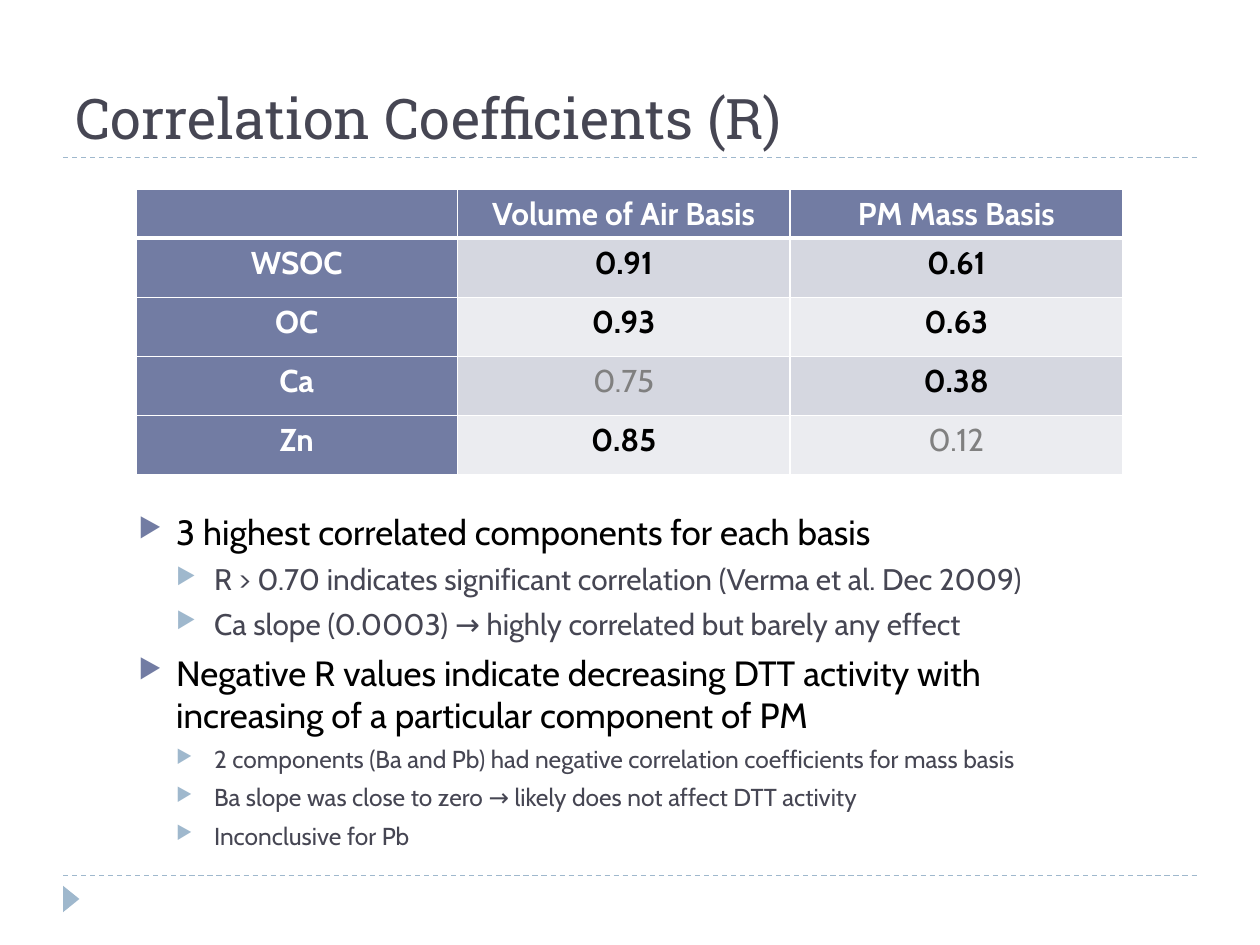
from lxml import etree
from pptx import Presentation, util as u
from pptx.dml.color import RGBColor
from pptx.enum import dml, shapes, text
from pptx.oxml import parse_xml
from pptx.oxml.ns import nsdecls, qn

rgb = RGBColor.from_string
INK, SLATE, SKY = "464653", "727CA3", "9FB8CD"


def put(p, words, size=18, color=INK, font="Cabin", bold=False):
    """Add a formatted run to a paragraph."""
    r = p.add_run()
    r.text = words
    r.font.size, r.font.name, r.font.bold = u.Pt(size), font, bold
    r.font.color.rgb = rgb(color)


prs = Presentation()
prs.slide_width, prs.slide_height = u.Inches(10), u.Inches(7.5)
W, H = prs.slide_width, prs.slide_height
margin = int(W * 0.05)
s = prs.slides.add_slide(prs.slide_layouts[5])

# Dashed rules above the footer and under the title
for y in (6.95, 1.25):
    rule = s.shapes.add_connector(shapes.MSO_CONNECTOR.STRAIGHT,
                                  margin, u.Inches(y), W - margin, u.Inches(y))
    rule.line.color.rgb = rgb(SKY)
    rule.line.width = u.Pt(0.75)
    rule.line.dash_style = dml.MSO_LINE.DASH
    etree.SubElement(rule._element.spPr, qn("a:effectLst"))

# Footer marker
sp = s.shapes.add_shape(shapes.MSO_SHAPE.ISOSCELES_TRIANGLE, u.Inches(0.46),
                        u.Inches(7.07), u.Inches(0.21), u.Inches(0.13))
sp.rotation = 90
sp.shadow.inherit = False
sp.fill.solid()
sp.fill.fore_color.rgb = rgb(SKY)
sp.line.fill.background()

# Title
title = s.shapes.title
title.left, title.top = margin, u.Inches(0.17)
title.width, title.height = W - 2 * margin, u.Inches(1.08)
tf = title.text_frame
tf.vertical_anchor = text.MSO_ANCHOR.BOTTOM
tf.paragraphs[0].alignment = text.PP_ALIGN.LEFT
put(tf.paragraphs[0], "Correlation Coefficients (R)", 32, font="Roboto Slab")

# Findings: level, size, wording
findings = [
    (0, 20, "3 highest correlated components for each basis"),
    (1, 17, "R > 0.70 indicates significant correlation (Verma et al. Dec 2009)"),
    (1, 17, "Ca slope (0.0003) → highly correlated but barely any effect"),
    (0, 20, "Negative R values indicate decreasing DTT activity with "
            "increasing of a particular component of PM"),
    (1, 14, "2 components (Ba and Pb) had negative correlation coefficients for mass basis"),
    (1, 14, "Ba slope was close to zero → likely does not affect DTT activity"),
    (1, 14, "Inconclusive for Pb"),
]
box = s.shapes.add_textbox(u.Inches(1), u.Inches(4), u.Inches(7.92), u.Inches(2.73))
tf = box.text_frame
tf.word_wrap = True
for i, (level, size, words) in enumerate(findings):
    p = tf.add_paragraph() if i else tf.paragraphs[0]
    p.level = level
    p.space_before = u.Pt(6 - level)
    put(p, words, size, INK if level else "000000")
    pPr = p._p.get_or_add_pPr()
    pPr.set("marL", str(u.Inches(0.3) * (level + 1)))
    pPr.set("indent", str(-u.Inches(0.3)))
    color = etree.SubElement(pPr, qn("a:buClr"))
    etree.SubElement(color, qn("a:srgbClr"), val=SKY if level else SLATE)
    etree.SubElement(pPr, qn("a:buSzPct"), val="76000")
    etree.SubElement(pPr, qn("a:buChar"), char="▶")

# Table of coefficients
rows = [
    ("", "Volume of Air Basis", "PM Mass Basis"),
    ("WSOC", "0.91", "0.61"),
    ("OC", "0.93", "0.63"),
    ("Ca", "0.75", "0.38"),
    ("Zn", "0.85", "0.12"),
]
muted = ("0.75", "0.12")
table = s.shapes.add_table(len(rows), 3, u.Inches(1.08), u.Inches(1.5),
                           u.Inches(7.83), u.Inches(2.25)).table
for col, width in zip(table.columns, (2.55, 2.64, 2.64)):
    col.width = u.Inches(width)
for i, row in enumerate(rows):
    table.rows[i].height = u.Inches(0.47 if i else 0.39)
    for j, words in enumerate(row):
        cell = table.cell(i, j)
        cell.margin_left = cell.margin_right = u.Inches(0.07)
        cell.margin_top = cell.margin_bottom = 0
        heading = i == 0 or j == 0

        # White borders, heavier under the heading row
        for side in "LRTB":
            heavy = (i, side) in ((0, "B"), (1, "T"))
            cell._tc.get_or_add_tcPr().append(parse_xml(
                f'<a:ln{side} {nsdecls("a")} w="{u.Pt(3 if heavy else 1)}">'
                f'<a:solidFill><a:srgbClr val="FFFFFF"/></a:solidFill></a:ln{side}>'))
        cell.fill.solid()
        cell.fill.fore_color.rgb = rgb(SLATE if heading else ("EBECF0", "D5D7E0")[i % 2])

        p = cell.text_frame.paragraphs[0]
        p.alignment = text.PP_ALIGN.CENTER
        p.line_spacing = 1.15
        if words:
            color = "FFFFFF" if heading else "808080" if words in muted else "000000"
            put(p, words, color=color, bold=words not in muted)

prs.save("out.pptx")
